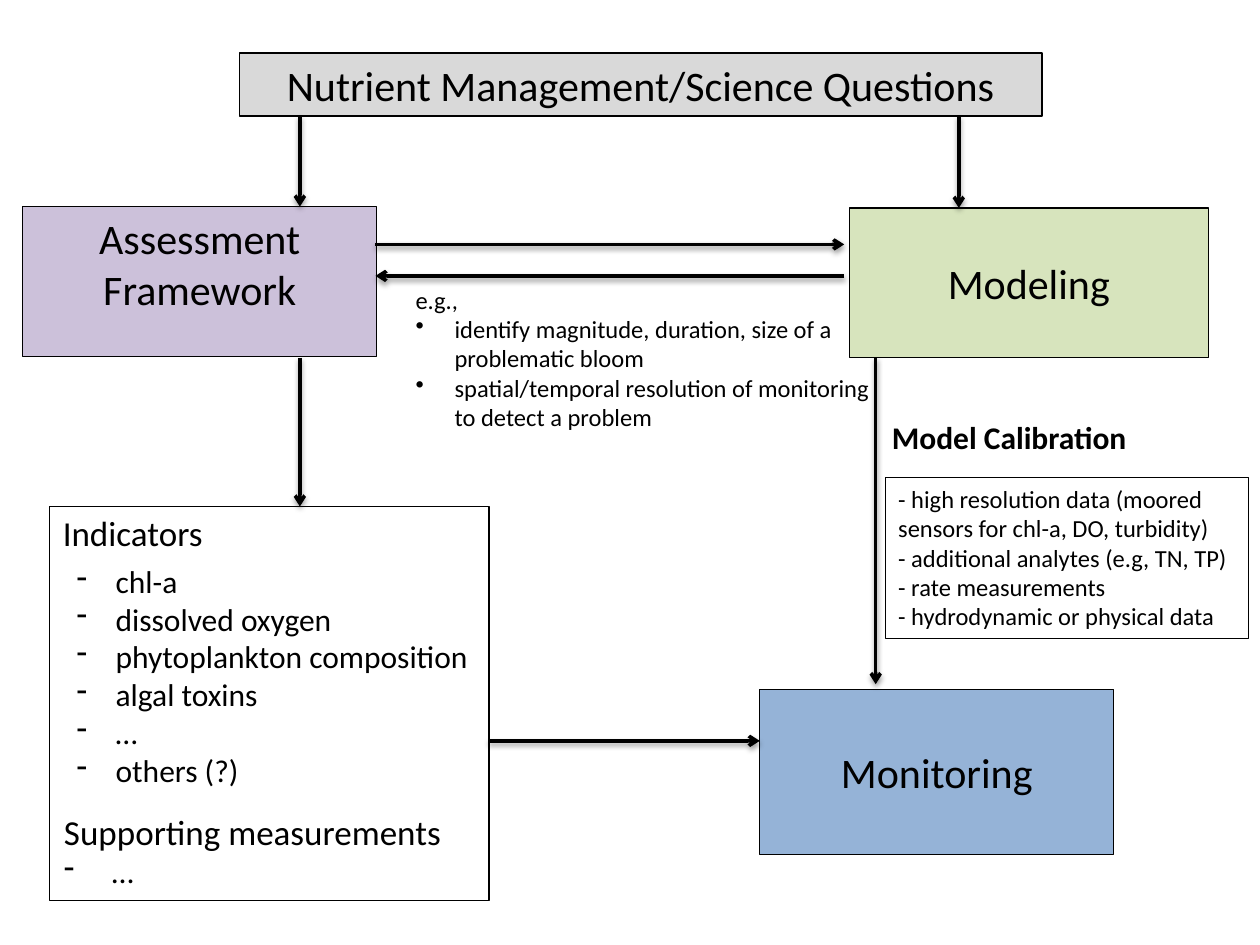
import pptx
import pptx.util
import pptx.dml.color
import pptx.enum.shapes
import pptx.enum.text
import pptx.oxml
import pptx.oxml.ns

Inches = pptx.util.Inches
Pt = pptx.util.Pt
RGBColor = pptx.dml.color.RGBColor
Align = pptx.enum.text.PP_ALIGN
Anchor = pptx.enum.text.MSO_ANCHOR

THEME = {
    "font": "Calibri",
    "ink": RGBColor(0, 0, 0),
    "paper": RGBColor(0xFF, 0xFF, 0xFF),
    "questions": RGBColor(0xD9, 0xD9, 0xD9),
    "framework": RGBColor(0xCC, 0xC1, 0xDA),
    "modeling": RGBColor(0xD7, 0xE4, 0xBD),
    "monitoring": RGBColor(0x95, 0xB3, 0xD7),
    "stage": 24, "heading": 20, "item": 18, "note": 14,
    "outline": 0.75, "arrow": 2,
}


def write(box, lines, size, align=Align.LEFT, anchor=Anchor.TOP, bold=None):
    """Fill a box with lines, each given as (text, bullet, indent in inches)."""
    frame = box.text_frame
    frame.word_wrap = True
    frame.auto_size = pptx.enum.text.MSO_AUTO_SIZE.NONE
    frame.vertical_anchor = anchor
    frame.text = "\n".join(text for text, _, _ in lines)
    for paragraph, (_, bullet, indent) in zip(frame.paragraphs, lines):
        paragraph.alignment = align
        if bullet:
            properties = paragraph._p.get_or_add_pPr()
            properties.set("marL", str(Inches(indent)))
            properties.set("indent", str(-Inches(indent)))
            properties.append(pptx.oxml.parse_xml(
                f'<a:buChar {pptx.oxml.ns.nsdecls("a")} char="{bullet}"/>'))
        for run in paragraph.runs:
            run.font.name = THEME["font"]
            run.font.size = Pt(size)
            run.font.bold = bold
            run.font.color.rgb = THEME["ink"]


def paint(box, fill=None, outlined=True):
    """Give a box its fill and thin outline."""
    if fill is None:
        box.fill.background()
    else:
        box.fill.solid()
        box.fill.fore_color.rgb = fill
    if outlined:
        box.line.color.rgb = THEME["ink"]
        box.line.width = Pt(THEME["outline"])
    else:
        box.line.fill.background()


deck = pptx.Presentation()
deck.slide_width, deck.slide_height = Inches(10), Inches(7.5)
slide = deck.slides.add_slide(deck.slide_layouts[5])
shapes = slide.shapes
RECTANGLE = pptx.enum.shapes.MSO_SHAPE.RECTANGLE

# Title: the questions that drive everything
questions = shapes.title
questions.left, questions.top = Inches(1.9), Inches(0.42)
questions.width, questions.height = Inches(6.37), Inches(0.5)
paint(questions, THEME["questions"])
write(questions, [("Nutrient Management/Science Questions", None, 0)],
      THEME["stage"], Align.CENTER)

# Coloured stages
stages = [
    (["Assessment", "Framework"], "framework", (0.18, 1.64, 2.81, 1.19), Anchor.TOP),
    (["Modeling"], "modeling", (6.74, 1.65, 2.85, 1.19), Anchor.MIDDLE),
    (["Monitoring"], "monitoring", (6.03, 5.47, 2.81, 1.31), Anchor.MIDDLE),
]
for words, color, place, anchor in stages:
    stage = shapes.add_shape(RECTANGLE, *map(Inches, place))
    stage.shadow.inherit = False
    paint(stage, THEME[color])
    write(stage, [(word, None, 0) for word in words], THEME["stage"],
          Align.CENTER, anchor)

# Indicators panel
indicators = ["chl-a", "dissolved oxygen", "phytoplankton composition",
              "algal toxins", "…", "others (?)"]
panel = shapes.add_shape(RECTANGLE, Inches(0.39), Inches(4.02), Inches(3.49), Inches(3.13))
panel.shadow.inherit = False
paint(panel)

indicators_heading = shapes.add_textbox(Inches(0.4), Inches(4.01), Inches(1.61), Inches(0.44))
write(indicators_heading, [("Indicators", None, 0)], THEME["heading"])

indicator_list = shapes.add_textbox(Inches(0.51), Inches(4.41), Inches(3.53), Inches(1.92))
write(indicator_list, [(name, "-", 0.31) for name in indicators], THEME["item"])

supporting = shapes.add_textbox(Inches(0.41), Inches(6.38), Inches(3.37), Inches(0.75))
write(supporting, [("Supporting measurements", None, 0), ("…", "-", 0.38)],
      THEME["heading"])
supporting.text_frame.paragraphs[1].runs[0].font.size = Pt(THEME["item"])

# Examples exchanged between framework and modeling
examples = shapes.add_textbox(Inches(3.2), Inches(2.21), Inches(3.8), Inches(1.28))
write(examples, [
    ("e.g.,", None, 0),
    ("identify magnitude, duration, size of a problematic bloom", "•", 0.31),
    ("spatial/temporal resolution of monitoring to detect a problem", "•", 0.31),
], THEME["note"])

# Model calibration needs
calibration = shapes.add_textbox(Inches(6.98), Inches(3.27), Inches(2.39), Inches(0.4))
write(calibration, [("Model Calibration", None, 0)], THEME["item"], bold=True)

data_needs = shapes.add_shape(RECTANGLE, Inches(7.03), Inches(3.79), Inches(2.88), Inches(1.28))
data_needs.shadow.inherit = False
paint(data_needs)
write(data_needs, [(need, None, 0) for need in (
    "- high resolution data (moored sensors for chl-a, DO, turbidity)",
    "- additional analytes (e.g, TN, TP)",
    "- rate measurements",
    "- hydrodynamic or physical data",
)], THEME["note"])

# Arrows, each from start to head, with a soft shadow below
flows = [
    (2.38, 0.92, 2.38, 1.64),  # questions to framework
    (7.61, 0.92, 7.61, 1.65),  # questions to modeling
    (2.98, 1.94, 6.7, 1.94),   # framework to modeling
    (6.7, 2.19, 2.98, 2.19),   # modeling to framework
    (2.38, 2.84, 2.38, 4.02),  # framework to indicators
    (3.88, 5.88, 6.03, 5.88),  # indicators to monitoring
    (6.95, 2.84, 6.95, 5.43),  # modeling to monitoring
]
for ends in flows:
    flow = shapes.add_connector(pptx.enum.shapes.MSO_CONNECTOR.STRAIGHT, *map(Inches, ends))
    flow.line.color.rgb = THEME["ink"]
    flow.line.width = Pt(THEME["arrow"])
    flow.line._get_or_add_ln().append(pptx.oxml.parse_xml(
        f'<a:tailEnd {pptx.oxml.ns.nsdecls("a")} type="arrow"/>'))
    flow._element.spPr.append(pptx.oxml.parse_xml(
        f'<a:effectLst {pptx.oxml.ns.nsdecls("a")}>'
        f'<a:outerShdw blurRad="{Pt(3.1)}" dist="{Pt(1.6)}" dir="5400000" rotWithShape="0">'
        f'<a:srgbClr val="{THEME["ink"]}"><a:alpha val="38000"/></a:srgbClr>'
        '</a:outerShdw></a:effectLst>'))

deck.save("out.pptx")
